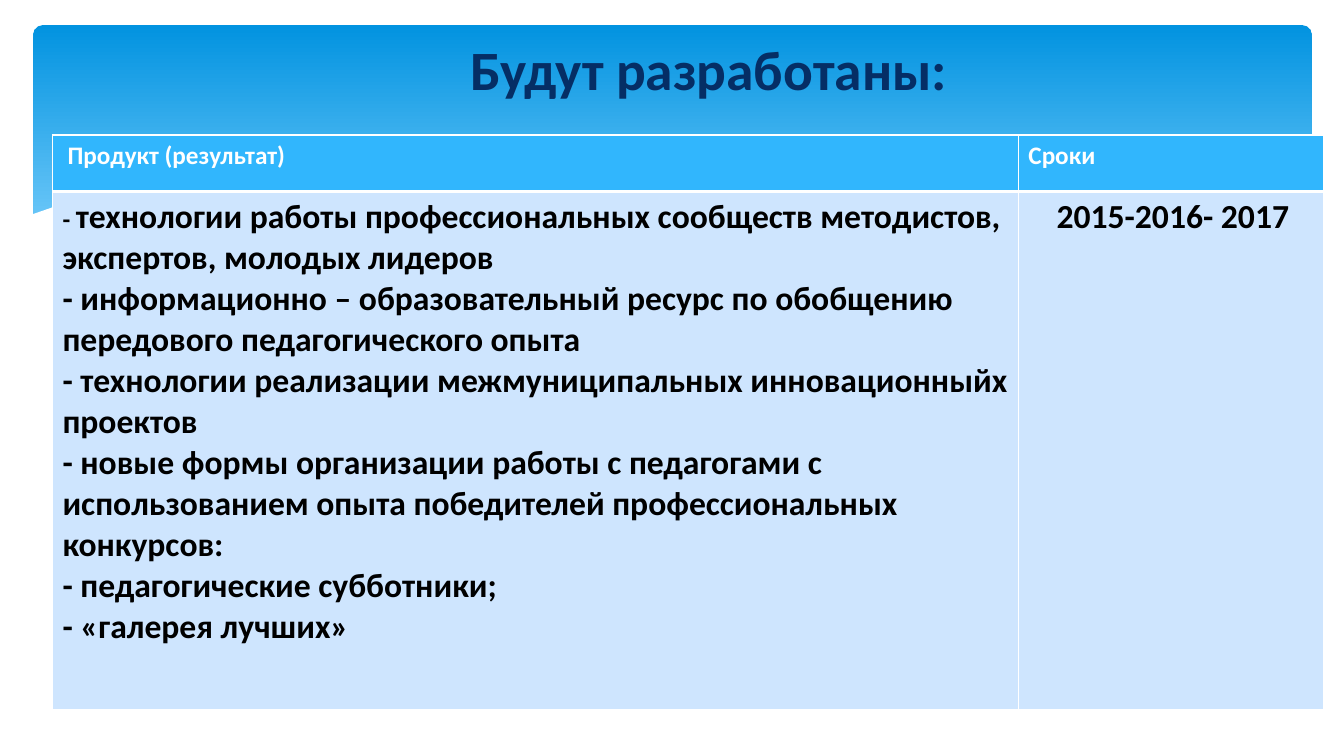
from dataclasses import dataclass

from lxml import etree
from pptx import Presentation
from pptx.dml.color import RGBColor
from pptx.enum import shapes, text
from pptx.oxml import ns
from pptx.util import Inches, Pt

FONT = "Calibri"
COLORS = {
    "sky_top": "0293E0",
    "sky_bottom": "83D3FE",
    "white": "FFFFFF",
    "header": "31B6FD",
    "body": "CEE5FE",
    "title": "052E65",
    "black": "000000",
}
WAVE = [
    (0.31, 2.13), (0.54, 2.05), (0.89, 1.97), (1.42, 1.89), (2.14, 1.84),
    (3.06, 1.85), (4.21, 1.94), (5.21, 2.07), (6.71, 2.33), (8.04, 2.54),
    (9.44, 2.7), (10.78, 2.77), (11.83, 2.71), (12.54, 2.59), (13.03, 2.46),
    (13.03, 3.29), (0.31, 3.29),
]


@dataclass
class CellText:
    row: int
    col: int
    lines: list[str]
    size: float
    color: str
    fill: str
    margin_left: float = 0.1
    bottom_line: float = 1


CELLS = [
    CellText(0, 0, ["Продукт (результат)"], 18, "white", "header", 0.15, 3),
    CellText(0, 1, ["Сроки"], 18, "white", "header", bottom_line=3),
    CellText(1, 0, [
        "технологии работы профессиональных сообществ методистов, экспертов, молодых лидеров",
        "- информационно – образовательный ресурс по обобщению передового педагогического опыта",
        "- технологии реализации межмуниципальных инновационныйх проектов",
        "- новые формы организации работы с педагогами с использованием опыта победителей "
        "профессиональных конкурсов:",
        "- педагогические субботники;",
        "- «галерея лучших»",
    ], 24, "black", "body"),
    CellText(1, 1, ["2015-2016- 2017"], 24, "black", "body", 0.38),
]


def rgb(name: str) -> RGBColor:
    return RGBColor.from_string(COLORS[name])


def format_run(r, size: float, color: str) -> None:
    r.font.name = FONT
    r.font.size = Pt(size)
    r.font.bold = True
    r.font.color.rgb = rgb(color)


def add_border(cell, side: str, width: float) -> None:
    """Draw one white cell edge; side is L, R, T or B."""
    tc_pr = cell._tc.get_or_add_tcPr()
    ln = etree.SubElement(tc_pr, ns.qn(f"a:ln{side}"), w=str(Pt(width)))
    fill = etree.SubElement(ln, ns.qn("a:solidFill"))
    etree.SubElement(fill, ns.qn("a:srgbClr"), val=COLORS["white"])


def add_banner(s) -> None:
    sp = s.shapes.add_shape(shapes.MSO_SHAPE.ROUNDED_RECTANGLE,
                            Inches(0.33), Inches(0.25), Inches(12.68), Inches(2.7))
    sp.adjustments[0] = 0.034
    sp.shadow.inherit = False
    sp.line.fill.background()
    sp.fill.gradient()
    sp.fill.gradient_angle = 270
    stops = zip(sp.fill.gradient_stops, (0, 0.9), ("sky_top", "sky_bottom"))
    for stop, position, color in stops:
        stop.position = position
        stop.color.rgb = rgb(color)


def add_wave(s) -> None:
    points = [(Inches(x), Inches(y)) for x, y in WAVE]
    builder = s.shapes.build_freeform(*points[0])
    builder.add_line_segments(points[1:], close=True)
    sp = builder.convert_to_shape()
    sp.shadow.inherit = False
    sp.fill.solid()
    sp.fill.fore_color.rgb = rgb("white")
    sp.line.fill.background()


def fill_cell(cell, content: CellText) -> None:
    for side in "LRT":
        add_border(cell, side, 3 if side == "T" and content.row else 1)
    add_border(cell, "B", content.bottom_line)
    cell.fill.solid()
    cell.fill.fore_color.rgb = rgb(content.fill)
    cell.margin_left = Inches(content.margin_left)
    tf = cell.text_frame
    tf.text = "\n".join(content.lines)
    for p in tf.paragraphs:
        for r in p.runs:
            format_run(r, content.size, content.color)


def add_small_dash(p) -> None:
    """Put a smaller dash before the paragraph's first run."""
    r = p.add_run()
    r.text = "- "
    format_run(r, 18, "black")
    p.runs[0]._r.addprevious(r._r)


def add_products_table(s) -> None:
    frame = s.shapes.add_table(2, 2, Inches(0.52), Inches(1.34), Inches(12.6), Inches(5.7))
    table = frame.table
    for column, width in zip(table.columns, (9.58, 3.03)):
        column.width = Inches(width)
    for row, height in zip(table.rows, (0.56, 5.14)):
        row.height = Inches(height)
    for content in CELLS:
        fill_cell(table.cell(content.row, content.col), content)
    add_small_dash(table.cell(1, 0).text_frame.paragraphs[0])


def place_title(s) -> None:
    sp = s.shapes.title
    sp.left, sp.top, sp.width, sp.height = map(Inches, (1.55, 0.33, 10.96, 0.7))
    tf = sp.text_frame
    tf.text = "Будут разработаны:"
    tf.auto_size = text.MSO_AUTO_SIZE.NONE
    tf.vertical_anchor = text.MSO_ANCHOR.MIDDLE
    p = tf.paragraphs[0]
    p.alignment = text.PP_ALIGN.CENTER
    format_run(p.runs[0], 39.6, "title")
    # The title must lie in front of the banner
    sp.element.getparent().append(sp.element)


def main() -> None:
    prs = Presentation()
    prs.slide_width, prs.slide_height = Inches(13.33), Inches(7.5)
    s = prs.slides.add_slide(prs.slide_layouts[5])
    add_banner(s)
    add_wave(s)
    add_products_table(s)
    place_title(s)
    prs.save("out.pptx")


if __name__ == "__main__":
    main()
